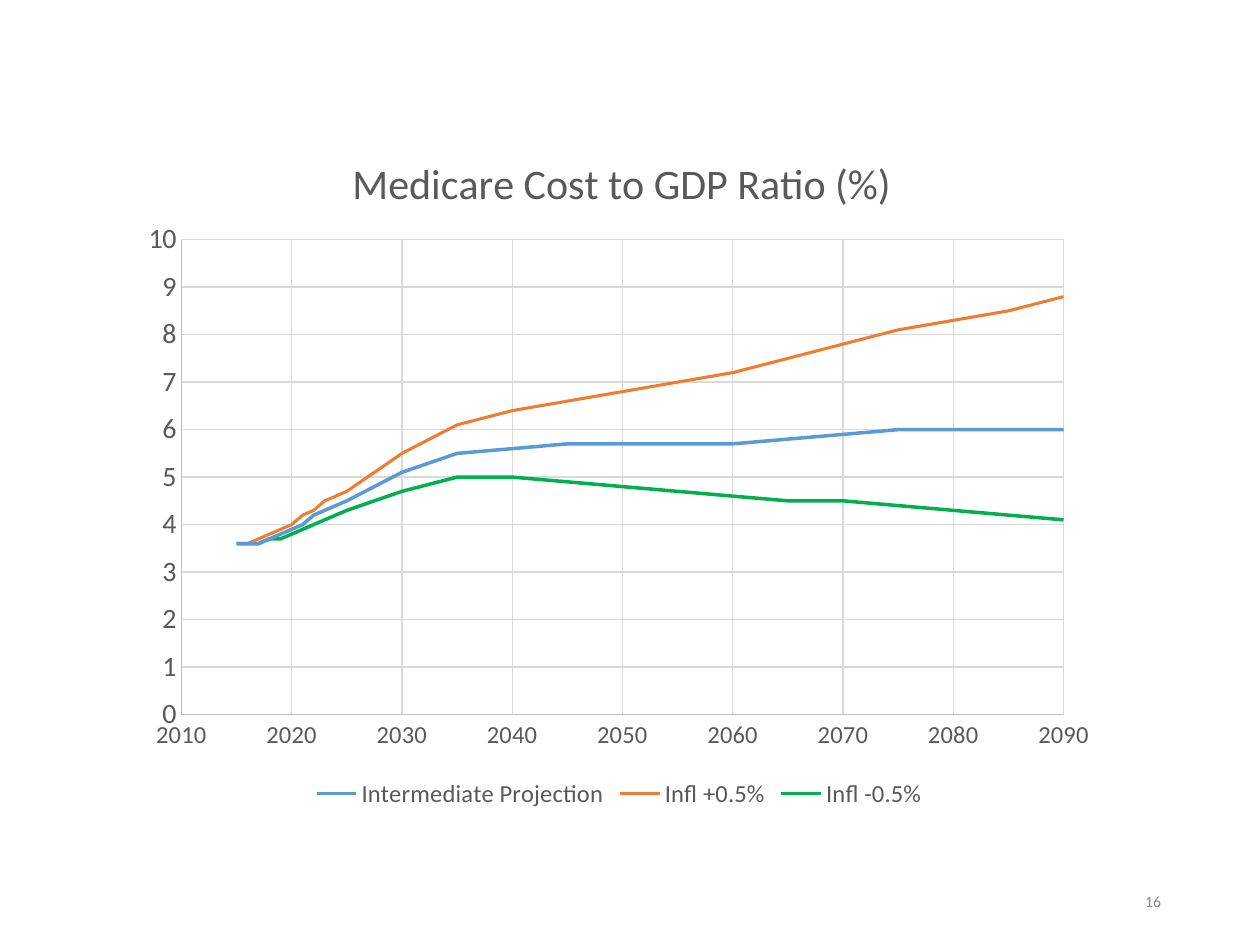
from dataclasses import dataclass

from lxml import etree
from pptx import Presentation
from pptx.chart.data import XyChartData
from pptx.dml.color import RGBColor
from pptx.enum.chart import XL_CHART_TYPE, XL_LEGEND_POSITION, XL_TICK_MARK
from pptx.enum.text import MSO_ANCHOR, PP_ALIGN
from pptx.oxml.ns import qn
from pptx.util import Pt

SCATTER_LINES = XL_CHART_TYPE.XY_SCATTER_LINES_NO_MARKERS
LEGEND_BOTTOM = XL_LEGEND_POSITION.BOTTOM
NO_TICK = XL_TICK_MARK.NONE
MIDDLE = MSO_ANCHOR.MIDDLE
RIGHT = PP_ALIGN.RIGHT


@dataclass(frozen=True)
class Theme:
    font: str = "Calibri"
    text: str = "595959"
    page_number: str = "8C8C8C"
    axis: str = "BFBFBF"
    grid: str = "D9D9D9"
    title_size: float = 24
    value_size: float = 16
    label_size: float = 14
    page_number_size: float = 9
    thin_line: float = 0.75


THEME = Theme()

YEARS = [*range(2015, 2025), *range(2025, 2091, 5)]

# name, colour, line width, percent of GDP for each year
PROJECTIONS = [
    ("Intermediate Projection", "5B9BD5", 2,
     [3.6, 3.6, 3.6, 3.7, 3.8, 3.9, 4.0, 4.2, 4.3, 4.4, 4.5, 5.1,
      5.5, 5.6, 5.7, 5.7, 5.7, 5.7, 5.8, 5.9, 6.0, 6.0, 6.0, 6.0]),
    ("Infl +0.5%", "ED7D31", 1.75,
     [3.6, 3.6, 3.7, 3.8, 3.9, 4.0, 4.2, 4.3, 4.5, 4.6, 4.7, 5.5,
      6.1, 6.4, 6.6, 6.8, 7.0, 7.2, 7.5, 7.8, 8.1, 8.3, 8.5, 8.8]),
    ("Infl -0.5%", "00B050", 2,
     [3.6, 3.6, 3.6, 3.7, 3.7, 3.8, 3.9, 4.0, 4.1, 4.2, 4.3, 4.7,
      5.0, 5.0, 4.9, 4.8, 4.7, 4.6, 4.5, 4.5, 4.4, 4.3, 4.2, 4.1]),
]


def style_font(font, size, color=THEME.text):
    font.name = THEME.font
    font.size = Pt(size)
    font.bold = False
    font.color.rgb = RGBColor.from_string(color)


def style_line(line, color, width=THEME.thin_line):
    line.color.rgb = RGBColor.from_string(color)
    line.width = Pt(width)


def set_layout(element, index, **settings):
    """Place a chart part by fractions of the chart area."""
    for layout in element.findall(qn("c:layout")):
        element.remove(layout)
    layout = etree.Element(qn("c:layout"))
    manual = etree.SubElement(layout, qn("c:manualLayout"))
    for name, value in settings.items():
        etree.SubElement(manual, qn(f"c:{name}"), val=str(value))
    element.insert(index, layout)


def style_axis(axis, minimum, maximum, step, size):
    axis.minimum_scale = minimum
    axis.maximum_scale = maximum
    axis.major_unit = step
    axis.major_tick_mark = axis.minor_tick_mark = NO_TICK
    axis.has_major_gridlines = True
    style_line(axis.major_gridlines.format.line, THEME.grid)
    style_line(axis.format.line, THEME.axis)
    style_font(axis.tick_labels.font, size)
    axis.tick_labels.number_format = "General"
    axis.tick_labels.number_format_is_linked = False


def add_chart_title(chart, text):
    chart.has_title = True
    title = chart.chart_title
    paragraph = title.text_frame.paragraphs[0]
    paragraph.text = text
    style_font(paragraph.font, THEME.title_size)
    title.include_in_layout = False
    set_layout(title._element, 1, xMode="edge", yMode="edge", x=0.22, y=0.05)


def add_projection_chart(slide):
    data = XyChartData()
    for name, _, _, values in PROJECTIONS:
        series = data.add_series(name)
        for year, value in zip(YEARS, values):
            series.add_data_point(year, value)
    chart = slide.shapes.add_chart(
        SCATTER_LINES, Pt(74), Pt(64), Pt(559.5), Pt(401), data).chart
    style_font(chart.font, THEME.label_size)
    add_chart_title(chart, "Medicare Cost to GDP Ratio (%)")

    style_axis(chart.category_axis, 2010, 2090, 10, THEME.label_size)
    style_axis(chart.value_axis, 0, 10, 1, THEME.value_size)
    plot = chart.plots[0]
    plot.vary_by_categories = False
    for series, (_, color, width, _) in zip(plot.series, PROJECTIONS):
        series.smooth = False
        style_line(series.format.line, color, width)

    chart.has_legend = True
    chart.legend.position = LEGEND_BOTTOM
    chart.legend.include_in_layout = False
    style_font(chart.legend.font, THEME.label_size)
    plot_area = chart._chartSpace.chart.plotArea
    set_layout(plot_area, 0, layoutTarget="inner", xMode="edge", yMode="edge",
               x=0.053, y=0.182, w=0.901, h=0.677)


def add_page_number(slide, number):
    box = slide.shapes.add_textbox(Pt(508.5), Pt(500.5), Pt(162), Pt(28.75))
    frame = box.text_frame
    frame.word_wrap = True
    frame.vertical_anchor = MIDDLE
    paragraph = frame.paragraphs[0]
    paragraph.text = str(number)
    paragraph.alignment = RIGHT
    style_font(paragraph.font, THEME.page_number_size, THEME.page_number)


def main():
    presentation = Presentation()
    presentation.slide_width = Pt(720)
    presentation.slide_height = Pt(540)
    slide = presentation.slides.add_slide(presentation.slide_layouts[6])
    add_page_number(slide, 16)
    add_projection_chart(slide)
    presentation.save("out.pptx")


if __name__ == "__main__":
    main()
